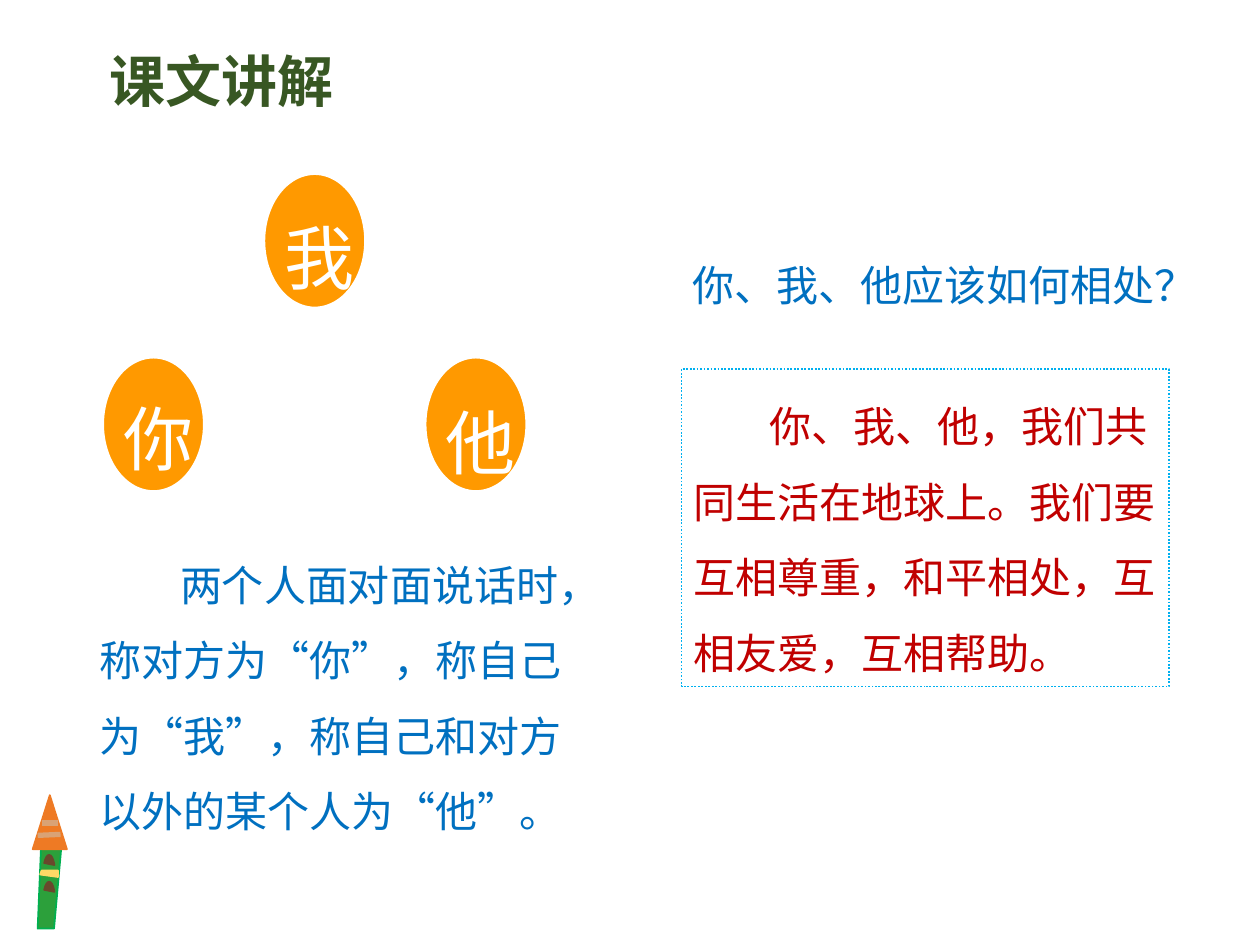
from lxml import etree
from pptx import Presentation
from pptx.dml.color import RGBColor
from pptx.enum.dml import MSO_LINE
from pptx.enum.shapes import MSO_CONNECTOR, MSO_SHAPE
from pptx.enum.text import MSO_ANCHOR, PP_ALIGN
from pptx.oxml.ns import qn
from pptx.util import Cm, Pt

FONT = "Noto Sans CJK SC"
CENTER, LEFT = PP_ALIGN.CENTER, PP_ALIGN.LEFT
TOP = MSO_ANCHOR.TOP
DOTTED = MSO_LINE.ROUND_DOT
STRAIGHT = MSO_CONNECTOR.STRAIGHT
RECT, OVAL = MSO_SHAPE.RECTANGLE, MSO_SHAPE.OVAL
TRIANGLE, CHORD = MSO_SHAPE.ISOSCELES_TRIANGLE, MSO_SHAPE.CHORD
COLORS = {
    "title": "385723", "blue": "0070C0", "red": "C00000", "white": "FFFFFF",
    "bubble": "FF9900", "frame": "00B0F0", "body": "2CA03B", "body_edge": "00B050",
    "tip": "EE7A24", "spot": "69482C", "band": "FFD966", "stripe": "D9A275",
}


def rgb(name):
    return RGBColor.from_string(COLORS[name])


def paint(sp, fill, line=None):
    sp.shadow.inherit = False
    if fill:
        sp.fill.solid()
        sp.fill.fore_color.rgb = rgb(fill)
    else:
        sp.fill.background()
    sp.line.color.rgb = rgb(line or fill)
    sp.line.width = Pt(1)


def write(sp, text, size, color, align=LEFT, indent=0, spacing=1.5, bold=False, wrap=True):
    tf = sp.text_frame
    tf.word_wrap = wrap
    tf.vertical_anchor = TOP
    p = tf.paragraphs[0]
    p.text = text
    p.alignment = align
    p.line_spacing = spacing
    p._p.get_or_add_pPr().set("indent", str(Cm(indent)))
    font = p.font
    font.name, font.size, font.bold = FONT, Pt(size), bold
    font.color.rgb = rgb(color)
    latin = p._p.pPr.find(qn("a:defRPr")).find(qn("a:latin"))
    east_asian = etree.Element(qn("a:ea"), typeface=FONT)
    latin.addnext(east_asian)


def add_text(s, x, y, w, h, text, size, color, **style):
    sp = s.shapes.add_textbox(Cm(x), Cm(y), Cm(w), Cm(h))
    write(sp, text, size, color, **style)


def add_polygon(s, x, y, points, fill, line):
    (x0, y0), *rest = [(Cm(x + dx), Cm(y + dy)) for dx, dy in points]
    builder = s.shapes.build_freeform(x0, y0)
    builder.add_line_segments(rest, close=True)
    paint(builder.convert_to_shape(), fill, line)


def add_spot(s, x, y):
    sp = s.shapes.add_shape(CHORD, Cm(x), Cm(y), Cm(0.66), Cm(0.23))
    sp.adjustments[0], sp.adjustments[1] = 89.45, 132.13
    sp.rotation = 90
    paint(sp, "spot")


def add_crayon(s, x, y):
    body = [(0.18, 0.76), (0.58, 1.02), (0.43, 2.69), (0.1, 2.69)]
    add_polygon(s, x, y, body, "body", "body_edge")
    tip = s.shapes.add_shape(TRIANGLE, Cm(x), Cm(y), Cm(0.69), Cm(1.09))
    paint(tip, "tip")
    add_spot(s, x, y + 1.42)
    band = [(0.18, 1.52), (0.51, 1.52), (0.51, 1.65), (0.15, 1.6)]
    add_polygon(s, x, y, band, "band", "band")
    add_spot(s, x, y + 1.96)
    for x1, y1, x2, y2 in [(0.18, 0.56, 0.51, 0.56), (0.1, 0.81, 0.56, 0.79)]:
        stripe = s.shapes.add_connector(
            STRAIGHT, Cm(x + x1), Cm(y + y1), Cm(x + x2), Cm(y + y2))
        stripe.line.color.rgb = rgb("stripe")
        stripe.line.width = Pt(3)
        etree.SubElement(stripe._element.spPr, qn("a:effectLst"))


def add_pronouns(s, x, y):
    """Three bubbles in a triangle, each with one pronoun."""
    step = 3.25
    bubbles = [("你", 3.7, 0.2), ("我", 0, 0.15), ("他", 3.7, 0.13)]
    for i, (word, drop, lift) in enumerate(bubbles):
        left, top = x + i * step, y + drop
        sp = s.shapes.add_shape(OVAL, Cm(left), Cm(top), Cm(2.03), Cm(2.69))
        paint(sp, "bubble", "white")
        add_text(s, left - 0.33, top - lift, 2.03, 2.82, word, 40, "white",
                 align=CENTER, indent=0.84)


def add_answer(s, x, y, w, h):
    sp = s.shapes.add_shape(RECT, Cm(x), Cm(y), Cm(w), Cm(h))
    paint(sp, None, "frame")
    sp.line.dash_style = DOTTED
    write(sp, "你、我、他，我们共同生活在地球上。我们要互相尊重，和平相处，互相友爱，互相帮助。",
          24, "red", indent=1.52)


def main():
    prs = Presentation()
    prs.slide_width, prs.slide_height = Cm(25.4), Cm(19.05)
    s = prs.slides.add_slide(prs.slide_layouts[6])
    add_crayon(s, 0.66, 16.03)
    add_text(s, 1.93, 0.81, 5.08, 1.63, "课文讲解", 32, "title",
             align=CENTER, spacing=1.0, bold=True, wrap=False)
    add_pronouns(s, 2.08, 3.51)
    add_answer(s, 13.74, 7.44, 9.83, 6.4)
    add_text(s, 12.88, 4.6, 11, 1.8, "你、我、他应该如何相处？", 24, "blue", indent=0.84)
    add_text(s, 1.75, 10.64, 10.49, 6.4,
             "两个人面对面说话时，称对方为“你”，称自己为“我”，称自己和对方以外的某个人为“他”。",
             24, "blue", indent=1.63)
    prs.save("out.pptx")


if __name__ == "__main__":
    main()
